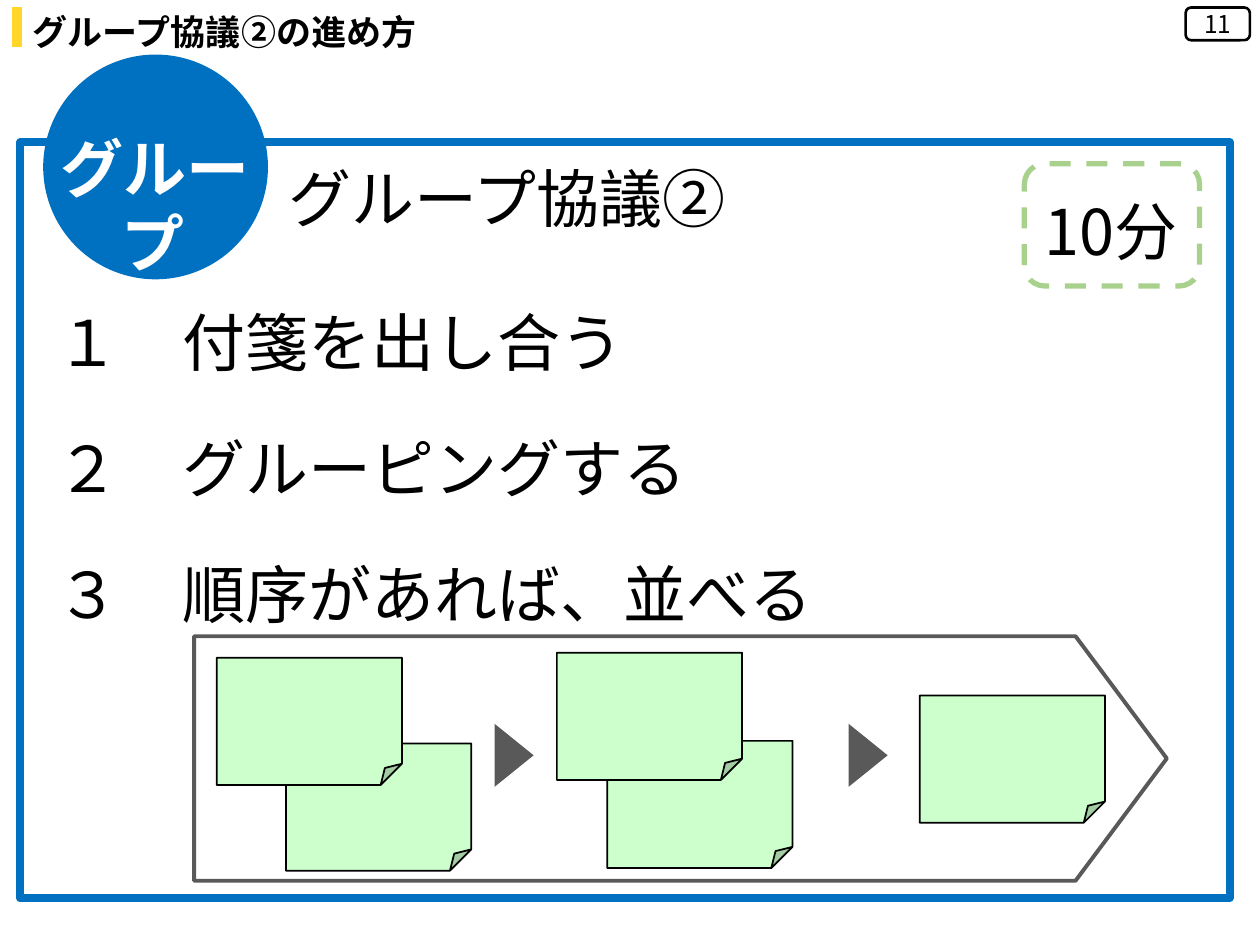
import pptx
import pptx.util
import pptx.dml.color
import pptx.enum.dml
import pptx.enum.shapes
import pptx.enum.text
import lxml.etree

Inches = pptx.util.Inches
Pt = pptx.util.Pt
SHAPE = pptx.enum.shapes.MSO_SHAPE
ALIGN = pptx.enum.text.PP_ALIGN
ANCHOR = pptx.enum.text.MSO_ANCHOR

TITLE = "グループ協議②の進め方"
PAGE_NUMBER = "11"
BADGE = "グループ"
HEADING = "グループ協議②"
DURATION = "10分"
STEPS = ["１　付箋を出し合う", "２　グルーピングする", "３　順序があれば、並べる"]
NOTES = [(2.27, 5.9), (1.72, 5.22), (4.82, 5.88), (4.42, 5.18), (7.3, 5.52)]
NOTE_SIZE = (1.47, 1.01)
ARROWS = [(3.83, 5.84), (6.64, 5.84)]
ARROW_SIZE = (0.5, 0.31)

FONT = "Noto Sans CJK JP"
COLOURS = {
    "black": "000000", "white": "FFFFFF", "yellow": "FFD629", "blue": "0070C0",
    "grey": "595959", "note": "CCFFCC", "green": "A9D18E",
}


def colour(name):
    return pptx.dml.color.RGBColor.from_string(COLOURS[name])


def style_paragraph(para, size, ink="black", bold=False, align=ALIGN.LEFT):
    para.alignment = align
    para.line_spacing = Pt(size * 1.2)
    para.space_before = para.space_after = Pt(0)
    for span in para.runs:
        span.font.size = Pt(size)
        span.font.bold = bold
        span.font.name = FONT
        span.font.color.rgb = colour(ink)
        east_asian = lxml.etree.SubElement(
            span.font._element, pptx.oxml.ns.qn("a:ea"))
        east_asian.set("typeface", FONT)


def fill_text(box, lines, size, **style):
    frame = box.text_frame
    frame.text = "\n".join(lines)
    frame.word_wrap = True
    frame.auto_size = pptx.enum.text.MSO_AUTO_SIZE.NONE
    frame.vertical_anchor = ANCHOR.TOP
    frame.margin_left = frame.margin_right = Inches(0.1)
    frame.margin_top = Inches(0.05 + size * 0.001)
    frame.margin_bottom = Inches(0)
    for para in frame.paragraphs:
        style_paragraph(para, size, **style)


def place(box, left, top, width, height):
    box.left, box.top = Inches(left), Inches(top)
    box.width, box.height = Inches(width), Inches(height)


def add_text(page, area, text, size, **style):
    box = page.shapes.add_textbox(*map(Inches, area))
    fill_text(box, [text], size, **style)


def add_shape(page, kind, area, fill=None, line=None, weight=1):
    shape = page.shapes.add_shape(kind, *map(Inches, area))
    shape.shadow.inherit = False
    if fill:
        shape.fill.solid()
        shape.fill.fore_color.rgb = colour(fill)
    else:
        shape.fill.background()
    if line:
        shape.line.color.rgb = colour(line)
        shape.line.width = Pt(weight)
    else:
        shape.line.fill.background()
    return shape


def add_page_number(page):
    box = add_shape(page, SHAPE.ROUNDED_RECTANGLE, (9.41, 0.06, 0.51, 0.26),
                    "white", "black", 1.5)
    fill_text(box, [PAGE_NUMBER], 14, align=ALIGN.CENTER)
    frame = box.text_frame
    frame.vertical_anchor = ANCHOR.MIDDLE
    frame.margin_left = frame.margin_right = Inches(0)
    frame.margin_top = frame.margin_bottom = Inches(0)
    frame.paragraphs[0].line_spacing = 1.0


def add_steps(page):
    body = page.placeholders[1]
    place(body, 0.35, 2.32, 7.56, 2.73)
    fill_text(body, STEPS, 36)
    for index, para in enumerate(body.text_frame.paragraphs):
        para.space_before = Pt(28.8 if index else 0)
        settings = para._p.get_or_add_pPr()
        settings.set("marL", "0")
        settings.set("indent", "0")
        lxml.etree.SubElement(settings, pptx.oxml.ns.qn("a:buNone"))


def add_sequence(page):
    banner = add_shape(page, SHAPE.PENTAGON, (1.54, 5.05, 7.72, 1.94),
                       "white", "grey", 2.25)
    banner.adjustments[0] = 0.373
    for corner in NOTES:
        add_shape(page, SHAPE.FOLDED_CORNER, corner + NOTE_SIZE, "note", "black")
    for corner in ARROWS:
        arrow = add_shape(page, SHAPE.ISOSCELES_TRIANGLE, corner + ARROW_SIZE, "grey")
        arrow.rotation = 90


def main():
    deck = pptx.Presentation()
    deck.slide_width, deck.slide_height = Inches(10), Inches(7.5)
    page = deck.slides.add_slide(deck.slide_layouts[1])

    place(page.shapes.title, 0.16, 0.01, 5, 0.44)
    fill_text(page.shapes.title, [TITLE], 20, bold=True)
    add_shape(page, SHAPE.RECTANGLE, (0.1, 0.06, 0.07, 0.31), "yellow", "yellow")
    add_page_number(page)

    add_shape(page, SHAPE.RECTANGLE, (0.16, 1.13, 9.6, 6), line="blue", weight=4.5)
    add_shape(page, SHAPE.OVAL, (0.35, 0.44, 1.77, 1.77), "blue", "blue")
    add_text(page, (0.24, 0.94, 1.95, 0.71), BADGE, 36,
             ink="white", bold=True, align=ALIGN.CENTER)
    add_steps(page)
    add_text(page, (2.19, 1.18, 5.8, 0.71), HEADING, 36)
    add_sequence(page)

    timer = add_shape(page, SHAPE.ROUNDED_RECTANGLE, (8.13, 1.3, 1.39, 0.97),
                      line="green", weight=3)
    timer.line.dash_style = pptx.enum.dml.MSO_LINE.DASH
    add_text(page, (8.19, 1.44, 1.42, 0.71), DURATION, 36)
    deck.save("out.pptx")


if __name__ == "__main__":
    main()
